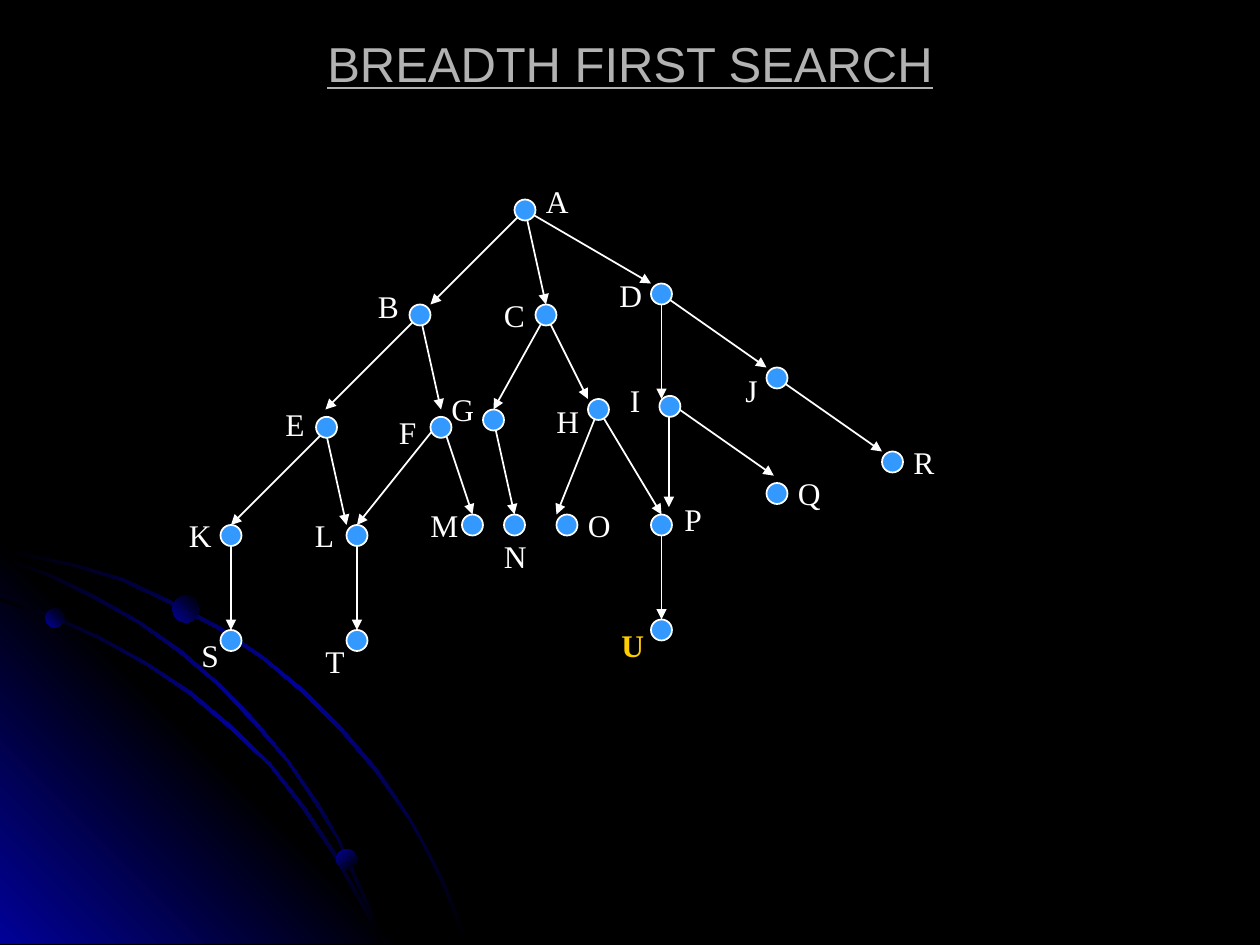
from lxml import etree
from pptx import Presentation
from pptx.dml.color import RGBColor
from pptx.enum.shapes import MSO_CONNECTOR, MSO_SHAPE
from pptx.enum.text import MSO_ANCHOR, MSO_AUTO_SIZE, PP_ALIGN
from pptx.oxml.ns import qn
from pptx.util import Inches, Pt

STRAIGHT = MSO_CONNECTOR.STRAIGHT
OVAL = MSO_SHAPE.OVAL
MIDDLE = MSO_ANCHOR.MIDDLE
CENTER = PP_ALIGN.CENTER
NO_AUTOSIZE = MSO_AUTO_SIZE.NONE

COLORS = {
    "background": "000000",
    "glow": "010199",
    "title": "B2B2B2",
    "ink": "FFFFFF",
    "node": "3399FF",
    "goal": "FFCC00",
}
WIDTH, HEIGHT = Inches(10), Inches(7.5)
CELL = WIDTH / 120
HUNDREDTH = Inches(0.01)
RIBBON_SHIFT = (-1.5, 2)

# name: (node column, node row, label left, label top)
NODES = {
    "A": (50, 20, 50.8, 16.7),
    "B": (40, 30, 34.8, 26.7),
    "C": (52, 30, 46.8, 27.6),
    "D": (63, 28, 57.8, 25.7),
    "E": (31.1, 40.7, 26, 38),
    "F": (42, 40.7, 36.8, 38.7),
    "G": (47, 40, 41.8, 36.6),
    "H": (57, 39, 51.8, 37.7),
    "I": (63.8, 38.7, 58.8, 35.7),
    "J": (74, 36, 69.8, 34.7),
    "K": (22, 51, 16.8, 48.6),
    "L": (34, 51, 28.8, 48.6),
    "M": (45, 50, 39.8, 47.6),
    "N": (49, 50, 46.8, 50.6),
    "O": (54, 50, 54.8, 47.6),
    "P": (63, 50, 64, 47),
    "Q": (74, 47, 74.8, 44.6),
    "R": (85, 44, 85.8, 41.6),
    "S": (22, 61, 18, 60),
    "T": (34, 61, 29.8, 60.6),
    "U": (63, 60, 58, 59),
}
ARROWS = {
    (50, 20): [(41, 29), (52, 29), (62, 27)],
    (40, 30): [(31, 39), (42, 39)],
    (52, 30): [(47, 39), (56, 38)],
    (31, 41): [(22, 50), (33, 50)],
    (42, 40): [(34, 50), (45, 49)],
    (57, 39): [(53, 49), (63, 49)],
    (47, 40): [(49, 49)],
    (34, 51): [(34, 60)],
    (22, 51): [(22, 60)],
    (63, 28): [(63, 38), (73, 35)],
    (63.7, 38.3): [(63.7, 48.3), (73.7, 45.3)],
    (74, 36): [(84, 43)],
    (63, 50): [(63, 59)],
}
OUTER_ARC = [(0, 435), (28, 441), (57, 447), (98, 459), (136, 477), (174, 497), (209, 521),
             (242, 548), (272, 578), (300, 611), (325, 648), (339, 673), (352, 698),
             (362, 723), (372, 749)]
INNER_ARC = [(0, 475), (41, 488), (79, 505), (117, 526), (152, 549), (184, 576), (215, 606),
             (242, 640), (266, 676), (286, 712), (296, 730), (303, 749)]
MIDDLE_ARC = [(0, 442), (39, 455), (76, 473), (111, 493), (144, 516), (175, 543), (204, 573),
              (229, 603), (254, 639), (269, 665), (282, 693), (294, 720), (303, 749)]
CORNER = [(0, 427), (0, 749), (322, 749)]
BEADS = [(36, 483, 15, 315), (267, 674, 16, 45), (137, 473, 21, 315)]


def color(name):
    return RGBColor.from_string(COLORS[name])


def grid(value):
    return int(value * CELL)


def fill_gradient(shape, names, angle):
    shape.shadow.inherit = False
    shape.line.fill.background()
    shape.fill.gradient()
    gradient = shape.element.spPr.find(qn("a:gradFill"))
    stops = gradient.find(qn("a:gsLst"))
    for stop in list(stops):
        stops.remove(stop)
    for index, name in enumerate(names):
        position = 100000 * index // (len(names) - 1)
        stop = etree.SubElement(stops, qn("a:gs"), pos=str(position))
        etree.SubElement(stop, qn("a:srgbClr"), val=COLORS[name])
    gradient.find(qn("a:lin")).set("ang", str(angle * 60000))


def add_outline(slide, points, names, angle):
    builder = slide.shapes.build_freeform(*points[0], scale=HUNDREDTH)
    builder.add_line_segments(points[1:], close=True)
    fill_gradient(builder.convert_to_shape(), names, angle)


def add_ribbon(slide, edge):
    shift_x, shift_y = RIBBON_SHIFT
    opposite = [(max(0, x + shift_x), min(749, y + shift_y)) for x, y in reversed(edge)]
    add_outline(slide, edge + opposite, ["background", "glow", "background"], 45)


def add_decoration(slide):
    add_ribbon(slide, OUTER_ARC)
    add_outline(slide, CORNER, ["glow", "background", "glow"], 315)
    add_ribbon(slide, INNER_ARC)
    add_ribbon(slide, MIDDLE_ARC)
    for left, top, size, angle in BEADS:
        box = [HUNDREDTH * length for length in (left, top, size, size)]
        bead = slide.shapes.add_shape(OVAL, *box)
        fill_gradient(bead, ["glow", "background"], angle)


def format_font(paragraph, face, size, color_name):
    font = paragraph.runs[0].font
    font.name = face
    font.size = Pt(size)
    font.color.rgb = color(color_name)
    return font


def set_title(slide, text):
    title = slide.shapes.title
    title.left, title.top = Inches(0.75), Inches(0.25)
    title.width, title.height = Inches(8.5), Inches(0.5)
    frame = title.text_frame
    frame.text = text
    frame.auto_size = NO_AUTOSIZE
    frame.vertical_anchor = MIDDLE
    paragraph = frame.paragraphs[0]
    paragraph.alignment = CENTER
    format_font(paragraph, "Arial", 28, "title").underline = True


def add_arrow(slide, start, end):
    points = [grid(value) for value in start + end]
    connector = slide.shapes.add_connector(STRAIGHT, *points)
    connector.line.color.rgb = color("ink")
    connector.line.width = Pt(1)
    line = connector.line._get_or_add_ln()
    etree.SubElement(line, qn("a:tailEnd"), type="triangle")
    etree.SubElement(connector.element.spPr, qn("a:effectLst"))


def add_node(slide, column, row):
    box = [grid(value) for value in (column - 1, row - 1, 2, 2)]
    node = slide.shapes.add_shape(OVAL, *box)
    node.shadow.inherit = False
    node.fill.solid()
    node.fill.fore_color.rgb = color("node")
    node.line.color.rgb = color("ink")
    node.line.width = Pt(1)


def add_label(slide, text, left, top):
    is_goal = text == "U"
    label = slide.shapes.add_textbox(grid(left), grid(top), Inches(0.39), Inches(0.4))
    label.text_frame.text = text
    label.text_frame.word_wrap = True
    paragraph = label.text_frame.paragraphs[0]
    font = format_font(paragraph, "Times New Roman", 18, "goal" if is_goal else "ink")
    font.bold = is_goal


def main():
    presentation = Presentation()
    presentation.slide_width, presentation.slide_height = WIDTH, HEIGHT
    slide = presentation.slides.add_slide(presentation.slide_layouts[5])
    slide.background.fill.solid()
    slide.background.fill.fore_color.rgb = color("background")
    add_decoration(slide)
    set_title(slide, "BREADTH FIRST SEARCH")
    for start, ends in ARROWS.items():
        for end in ends:
            add_arrow(slide, start, end)
    for column, row, _, _ in NODES.values():
        add_node(slide, column, row)
    for name, (_, _, left, top) in NODES.items():
        add_label(slide, name, left, top)
    presentation.save("out.pptx")


if __name__ == "__main__":
    main()
